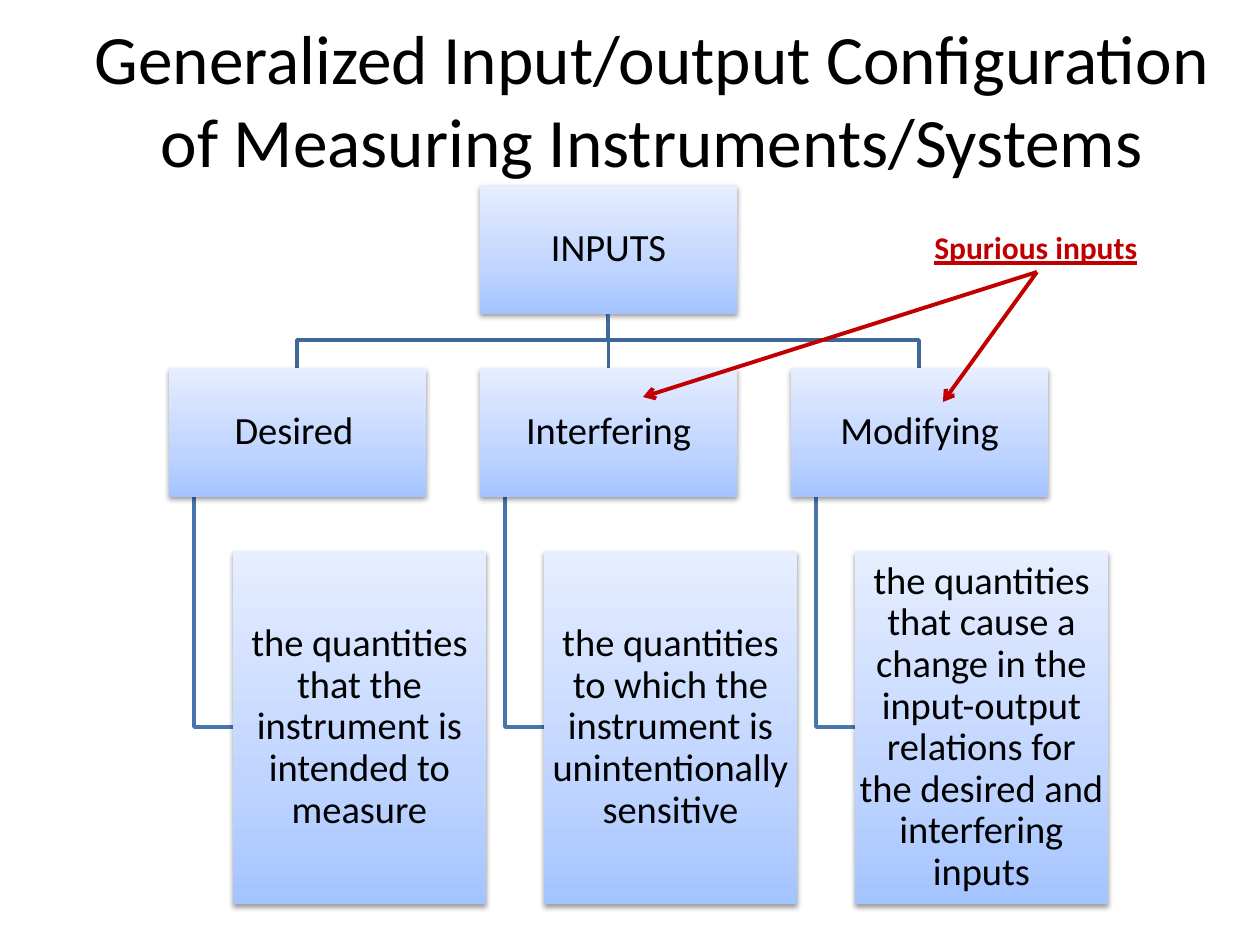
from lxml import etree
from pptx import Presentation
from pptx.dml.color import RGBColor
from pptx.enum.shapes import MSO_CONNECTOR as Link, MSO_SHAPE as Shape
from pptx.enum.text import MSO_ANCHOR as Anchor, MSO_AUTO_SIZE as Fit, PP_ALIGN as Align
from pptx.oxml.ns import qn
from pptx.util import Emu, Pt

SCALE = 914400 / 126
COLORS = {
    "text": "000000",
    "accent": "C00000",
    "branch": "3F6797",
    "hanger": "4875AC",
    "shadow": "000000",
    "bottom": "A4C4FF",
    "middle": "BFD4FF",
    "top": "E6EEFF",
}
GRADIENT = [(0, "bottom"), (35, "middle"), (100, "top")]

CARD_WIDTH, CARD_HEIGHT = 257, 129
DETAIL_WIDTH, DETAIL_HEIGHT = 253, 353
ROOT_TOP, KIND_TOP, DETAIL_TOP = 185, 368, 551
FIRST_LEFT, COLUMN_STEP = 169, 311
HANGER_INDENT, DETAIL_INDENT = 25, 64
BRANCH_Y = 340

INPUT_KINDS = [
    ("Desired\t", "the quantities that the instrument is intended to measure"),
    ("Interfering", "the quantities to which the instrument is unintentionally sensitive"),
    ("Modifying", "the quantities that cause a change in the input-output relations "
                  "for the desired and interfering inputs"),
]
SPURIOUS_ORIGIN = (1037, 272)
SPURIOUS_TARGETS = [(643, 397), (943, 402)]


def px(length):
    return Emu(round(length * SCALE))


def rgb(role):
    return RGBColor.from_string(COLORS[role])


def apply(target, values):
    for name, value in values.items():
        setattr(target, name, value)


def write(frame, wording, size, frame_format, color="text", align=Align.CENTER,
          spacing=None, **font_format):
    apply(frame, {"word_wrap": True, **frame_format})
    paragraph = frame.paragraphs[0]
    apply(paragraph, {"alignment": align, "line_spacing": spacing})
    run = paragraph.add_run()
    run.text = wording
    apply(run.font, {"name": "Calibri", "size": Pt(size), **font_format})
    run.font.color.rgb = rgb(color)


def add_label(slide, box, wording, size, frame_format, **text_format):
    label = slide.shapes.add_textbox(*map(px, box))
    write(label.text_frame, wording, size, frame_format, **text_format)


def set_gradient(card):
    card.fill.gradient()
    card.fill.gradient_angle = 90
    stops = card._element.spPr.find(qn("a:gradFill")).find(qn("a:gsLst"))
    for stop in list(stops):
        stops.remove(stop)
    for position, role in GRADIENT:
        stop = etree.SubElement(stops, qn("a:gs"), pos=str(position * 1000))
        etree.SubElement(stop, qn("a:srgbClr"), val=COLORS[role])


def set_shadow(card):
    card.shadow.inherit = False
    effects = card._element.spPr.find(qn("a:effectLst"))
    shadow = etree.SubElement(effects, qn("a:outerShdw"), blurRad=str(Pt(3.1)),
                              dist=str(Pt(1.6)), dir="5400000", rotWithShape="0")
    color = etree.SubElement(shadow, qn("a:srgbClr"), val=COLORS["shadow"])
    etree.SubElement(color, qn("a:alpha"), val="38000")


def add_card(slide, box, wording):
    card = slide.shapes.add_shape(Shape.RECTANGLE, *map(px, box))
    card.line.fill.background()
    set_gradient(card)
    set_shadow(card)
    margins = {f"margin_{side}": px(2) for side in ("left", "top", "right", "bottom")}
    write(card.text_frame, wording, 22,
          {"vertical_anchor": Anchor.MIDDLE, **margins}, spacing=0.9)
    return card


def add_bent_line(slide, points, color):
    start, *rest = points
    builder = slide.shapes.build_freeform(*start, scale=SCALE)
    builder.add_line_segments(rest, close=False)
    bent = builder.convert_to_shape()
    bent.fill.background()
    bent.shadow.inherit = False
    bent.line.color.rgb = rgb(color)
    bent.line.width = Pt(2)


def add_straight_line(slide, start, end, color, width):
    straight = slide.shapes.add_connector(Link.STRAIGHT, *map(px, (*start, *end)))
    straight.line.color.rgb = rgb(color)
    straight.line.width = Pt(width)
    etree.SubElement(straight._element.spPr, qn("a:effectLst"))
    return straight


def add_arrow(slide, start, end):
    arrow = add_straight_line(slide, start, end, "accent", 2.25)
    etree.SubElement(arrow.line._get_or_add_ln(), qn("a:tailEnd"), type="arrow")


def add_input_tree(slide):
    lefts = [FIRST_LEFT + COLUMN_STEP * column for column in range(len(INPUT_KINDS))]
    centers = [left + CARD_WIDTH // 2 for left in lefts]
    root_left, root_center = lefts[1], centers[1]
    root_bottom, kind_bottom = ROOT_TOP + CARD_HEIGHT, KIND_TOP + CARD_HEIGHT
    detail_middle = DETAIL_TOP + DETAIL_HEIGHT // 2

    for left, center in zip(lefts, centers):
        hanger_x = left + HANGER_INDENT
        add_bent_line(slide, [(hanger_x, kind_bottom), (hanger_x, detail_middle),
                              (left + DETAIL_INDENT, detail_middle)], "hanger")
        if center != root_center:
            add_bent_line(slide, [(root_center, root_bottom), (root_center, BRANCH_Y),
                                  (center, BRANCH_Y), (center, KIND_TOP)], "branch")

    root = add_card(slide, (root_left, ROOT_TOP, CARD_WIDTH, CARD_HEIGHT), "INPUTS")
    for left, center, (kind, detail) in zip(lefts, centers, INPUT_KINDS):
        card = add_card(slide, (left, KIND_TOP, CARD_WIDTH, CARD_HEIGHT), kind)
        add_card(slide, (left + DETAIL_INDENT, DETAIL_TOP, DETAIL_WIDTH, DETAIL_HEIGHT),
                 detail)
        if center == root_center:
            trunk = add_straight_line(slide, (center, root_bottom), (center, KIND_TOP),
                                      "branch", 2)
            trunk.begin_connect(root, 2)
            trunk.end_connect(card, 0)


def add_spurious_note(slide):
    add_label(slide, (922, 222, 229, 50), "Spurious inputs", 18,
              {"word_wrap": False, "auto_size": Fit.SHAPE_TO_FIT_TEXT},
              color="accent", align=Align.LEFT, bold=True, underline=True)
    for target in SPURIOUS_TARGETS:
        add_arrow(slide, SPURIOUS_ORIGIN, target)


def main():
    deck = Presentation()
    apply(deck, {"slide_width": px(1260), "slide_height": px(945)})
    slide = deck.slides.add_slide(deck.slide_layouts[6])
    add_label(slide, (63, 19, 1178, 158),
              "Generalized Input/output Configuration of Measuring Instruments/Systems",
              39.6, {"vertical_anchor": Anchor.MIDDLE})
    add_input_tree(slide)
    add_spurious_note(slide)
    deck.save("out.pptx")


if __name__ == "__main__":
    main()
